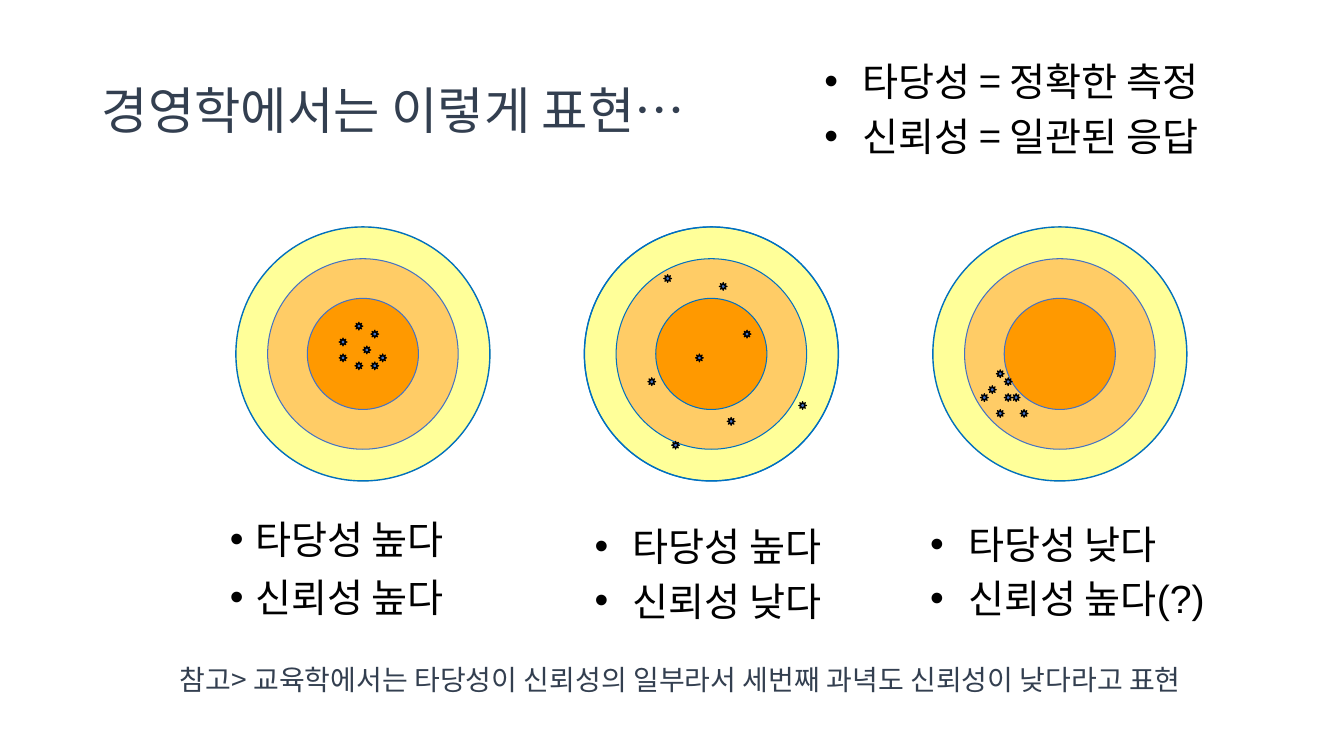
from pptx import Presentation
from pptx.dml.color import RGBColor
from pptx.enum.shapes import MSO_SHAPE
from pptx.enum.text import MSO_ANCHOR, MSO_AUTO_SIZE, PP_ALIGN
from pptx.oxml.ns import qn
from pptx.util import Pt
from lxml.etree import SubElement

KOREAN = "Noto Sans CJK KR"
UNIT = 5.67
RINGS = [(0, 32, "FFFF99"), (4, 24, "FFCC66"), (9, 14, "FF9900")]
TARGET_TOP = 162.1
TARGETS = [
    (168.5, ["FFFF99", "4472C4", "4472C4"],
     [(13, 14), (13, 16), (16, 15), (15, 17), (15, 12), (18, 16), (17, 13), (17, 17)]),
    (417.4, ["0070C0", "0070C0", "0070C0"],
     [(8, 19), (14, 16), (18, 24), (10, 6), (11, 27), (27, 22), (20, 13), (17, 7)]),
    (666.3, ["FFFF99", "4472C4", "4472C4"],
     [(8, 18), (6, 21), (11, 23), (8, 23), (9, 21), (9, 19), (7, 20), (10, 21)]),
]


def rgb(color):
    return RGBColor.from_string(color)


def place(sp, box):
    sp.left, sp.top, sp.width, sp.height = map(Pt, box)


def add_run(p, text, size=28, font=KOREAN, color="000000"):
    r = p.add_run()
    r.text = text
    r.font.size = Pt(size)
    r.font.color.rgb = rgb(color)
    r.font.name = font
    SubElement(r.font._element, qn("a:ea")).set("typeface", KOREAN)


def add_shape(s, kind, box, fill=None, line="000000", width=0.75):
    sp = s.shapes.add_shape(kind, *map(Pt, box))
    sp.shadow.inherit = False
    if fill:
        sp.fill.solid()
        sp.fill.fore_color.rgb = rgb(fill)
    else:
        sp.fill.background()
    sp.line.color.rgb = rgb(line)
    sp.line.width = Pt(width)
    return sp


def add_title(s, box):
    sp = s.shapes.title
    place(sp, box)
    tf = sp.text_frame
    tf.auto_size = MSO_AUTO_SIZE.NONE
    tf.vertical_anchor = MSO_ANCHOR.MIDDLE
    p = tf.paragraphs[0]
    p.alignment = PP_ALIGN.LEFT
    p.line_spacing = 0.9
    add_run(p, "경영학에서는 이렇게 표현", size=36, color="333F50")
    add_run(p, "…", size=36, font="Arial", color="333F50")


def add_bullets(s, box, lines, sp=None, font="Arial", indent=27, leading=36.7, before=2.2):
    sp = sp or s.shapes.add_textbox(0, 0, 0, 0)
    place(sp, box)
    tf = sp.text_frame
    tf.word_wrap = True
    tf.auto_size = MSO_AUTO_SIZE.NONE
    for i, line in enumerate(lines):
        p = tf.add_paragraph() if i else tf.paragraphs[0]
        p.line_spacing = Pt(leading)
        p.space_before = Pt(before)
        pPr = p._p.get_or_add_pPr()
        pPr.set("marL", str(Pt(indent)))
        pPr.set("indent", str(-Pt(indent)))
        SubElement(pPr, qn("a:buFont")).set("typeface", "Arial")
        SubElement(pPr, qn("a:buChar")).set("char", "•")
        add_run(p, line, font=font)


def add_target(s, left, top, lines, holes):
    for (offset, size, fill), line in zip(RINGS, lines):
        box = (left + offset * UNIT, top + offset * UNIT, size * UNIT, size * UNIT)
        add_shape(s, MSO_SHAPE.OVAL, box, fill, line)
    for x, y in holes:
        hole = add_shape(s, MSO_SHAPE.SUN, (left + x * UNIT, top + y * UNIT, UNIT, UNIT), "4472C4")
        hole.adjustments[0] = 0.25
    add_shape(s, MSO_SHAPE.OVAL, (left, top, 32 * UNIT, 32 * UNIT), line="0070C0", width=1)


def add_footnote(s, box):
    tf = s.shapes.add_textbox(*map(Pt, box)).text_frame
    tf.word_wrap = True
    tf.vertical_anchor = MSO_ANCHOR.MIDDLE
    p = tf.paragraphs[0]
    p.alignment = PP_ALIGN.CENTER
    add_run(p, "참고> 교육학에서는 타당성이 신뢰성의 일부라서 세번째 과녁도 신뢰성이 낮다라고 표현",
            size=20, color="333F50")


def main():
    prs = Presentation()
    prs.slide_width, prs.slide_height = Pt(960), Pt(540)
    s = prs.slides.add_slide(prs.slide_layouts[1])
    add_title(s, (65.5, 36, 511, 90))
    add_bullets(s, (157, 366.5, 198.7, 96.5), ["타당성 높다", "신뢰성 높다"],
                sp=s.placeholders[1], indent=18, leading=31.6, before=9.6)
    add_bullets(s, (417.6, 366.5, 198.7, 96.5), ["타당성 높다", "신뢰성 낮다"])
    add_bullets(s, (657.4, 365, 247.7, 98), ["타당성 낮다", "신뢰성 높다(?)"])
    for left, lines, holes in TARGETS:
        add_target(s, left, TARGET_TOP, lines, holes)
    add_bullets(s, (581.8, 34.6, 334.8, 93.6),
                ["타당성 = 정확한 측정", "신뢰성 = 일관된 응답"], font=KOREAN)
    add_footnote(s, (77.8, 467.3, 816.5, 35.3))
    prs.save("out.pptx")


if __name__ == "__main__":
    main()
